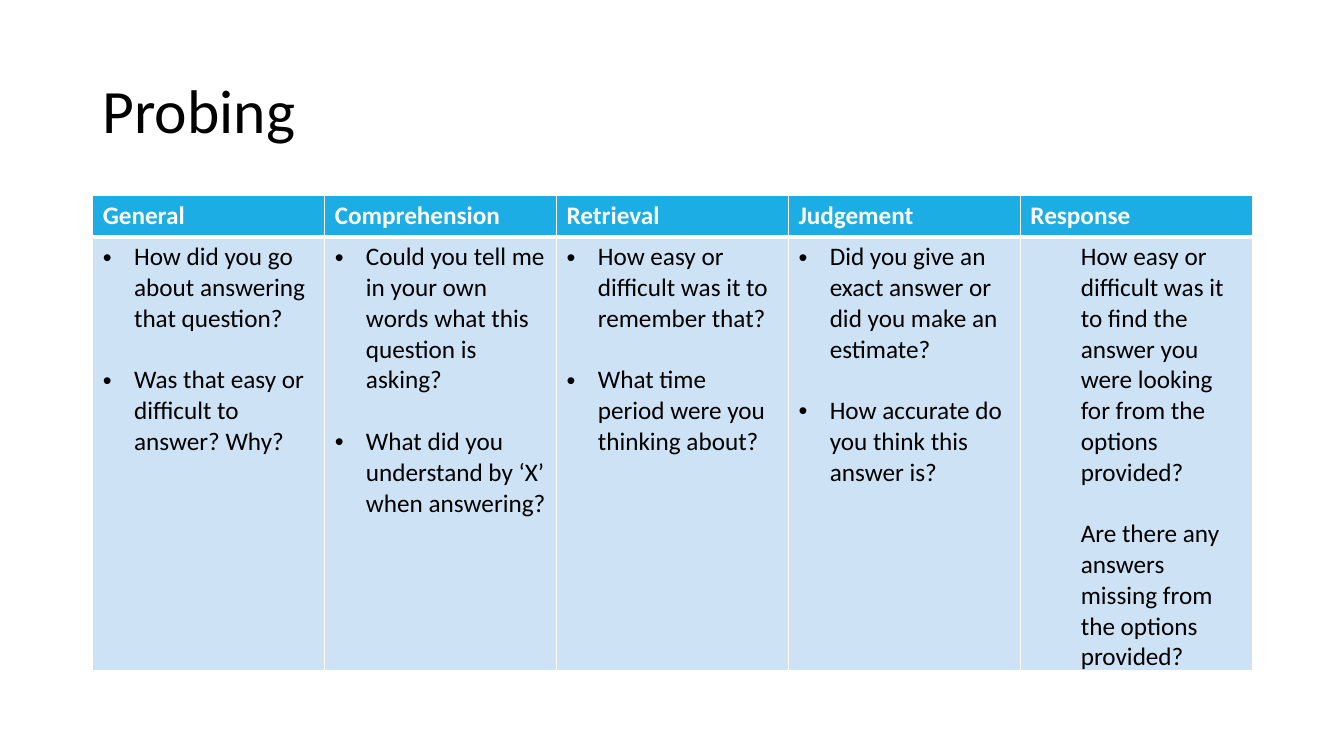
import pptx
import pptx.dml.color
import pptx.enum.text
import pptx.oxml
import pptx.oxml.ns
import pptx.util

COLORS = {"text": "000000", "header": "1CADE4", "body": "CDE3F5", "line": "FFFFFF"}
FONT = "Calibri"
TEXT_SIZE = 18
LINE_PITCH = 22
HEADER_HEIGHT = 0.41
BULLET_INDENT = 0.31
PLAIN_INDENT = 0.5

# Heading, whether its questions are bulleted, and the questions
PROBES = [
    ("General", True, [
        "How did you go about answering that question?",
        "Was that easy or difficult to answer? Why?"]),
    ("Comprehension", True, [
        "Could you tell me in your own words what this question is asking?",
        "What did you understand by ‘X’ when answering?"]),
    ("Retrieval", True, [
        "How easy or difficult was it to remember that?",
        "What time period were you thinking about?"]),
    ("Judgement", True, [
        "Did you give an exact answer or did you make an estimate?",
        "How accurate do you think this answer is?"]),
    ("Response", False, [
        "How easy or difficult was it to find the answer you were looking for "
        "from the options provided?",
        "Are there any answers missing from the options provided?"]),
]


def rgb(name):
    return pptx.dml.color.RGBColor.from_string(COLORS[name])


def make_element(tag, **attributes):
    element = pptx.oxml.parse_xml(f"<{tag} {pptx.oxml.ns.nsdecls('a')}/>")
    for key, value in attributes.items():
        element.set(key, str(value))
    return element


def format_runs(para, size, color, bold=False):
    for span in para.runs:
        span.font.name = FONT
        span.font.size = pptx.util.Pt(size)
        span.font.bold = bold
        span.font.color.rgb = rgb(color)


def indent(para, bulleted):
    properties = para._p.get_or_add_pPr()
    left = pptx.util.Inches(BULLET_INDENT if bulleted else PLAIN_INDENT)
    properties.set("marL", str(left))
    properties.set("indent", str(-left if bulleted else 0))
    if bulleted:
        properties.append(make_element("a:buFont", typeface="Arial"))
        properties.append(make_element("a:buChar", char="•"))
    else:
        properties.append(make_element("a:buNone"))


def style_cell(cell, fill, bottom_width):
    cell.fill.solid()
    cell.fill.fore_color.rgb = rgb(fill)
    # Borders come before the fill in the cell properties
    widths = {"a:lnL": 1, "a:lnR": 1, "a:lnT": 1, "a:lnB": bottom_width}
    for position, (tag, width) in enumerate(widths.items()):
        line = make_element(tag, w=pptx.util.Pt(width))
        paint = make_element("a:solidFill")
        paint.append(make_element("a:srgbClr", val=COLORS["line"]))
        line.append(paint)
        cell._tc.get_or_add_tcPr().insert(position, line)


def add_title(page, box, text):
    shape = page.shapes.add_textbox(*map(pptx.util.Inches, box))
    frame = shape.text_frame
    frame.word_wrap = True
    frame.vertical_anchor = pptx.enum.text.MSO_ANCHOR.MIDDLE
    frame.text = text
    para = frame.paragraphs[0]
    para.line_spacing = 0.9
    format_runs(para, 44, "text")


def add_probe_table(page, box, probes):
    left, top, width, height = map(pptx.util.Inches, box)
    table = page.shapes.add_table(2, len(probes), left, top, width, height).table
    header_height = pptx.util.Inches(HEADER_HEIGHT)
    table.rows[0].height = header_height
    table.rows[1].height = height - header_height

    for column, (heading, bulleted, questions) in enumerate(probes):
        # Heading cell
        cell = table.cell(0, column)
        style_cell(cell, "header", 3)
        cell.text_frame.text = heading
        format_runs(cell.text_frame.paragraphs[0], TEXT_SIZE, "line", bold=True)

        # Question cell, one empty line's height between questions
        cell = table.cell(1, column)
        style_cell(cell, "body", 1)
        cell.text_frame.text = "\n".join(questions)
        for number, para in enumerate(cell.text_frame.paragraphs):
            para.space_before = pptx.util.Pt(LINE_PITCH if number else 0)
            indent(para, bulleted)
            format_runs(para, TEXT_SIZE, "text")


def main():
    deck = pptx.Presentation()
    deck.slide_width = pptx.util.Inches(13.33)
    deck.slide_height = pptx.util.Inches(7.5)
    page = deck.slides.add_slide(deck.slide_layouts[6])
    add_title(page, (0.92, 0.4, 11.5, 1.45), "Probing")
    add_probe_table(page, (0.92, 1.94, 11.5, 4.71), PROBES)
    deck.save("out.pptx")


if __name__ == "__main__":
    main()
